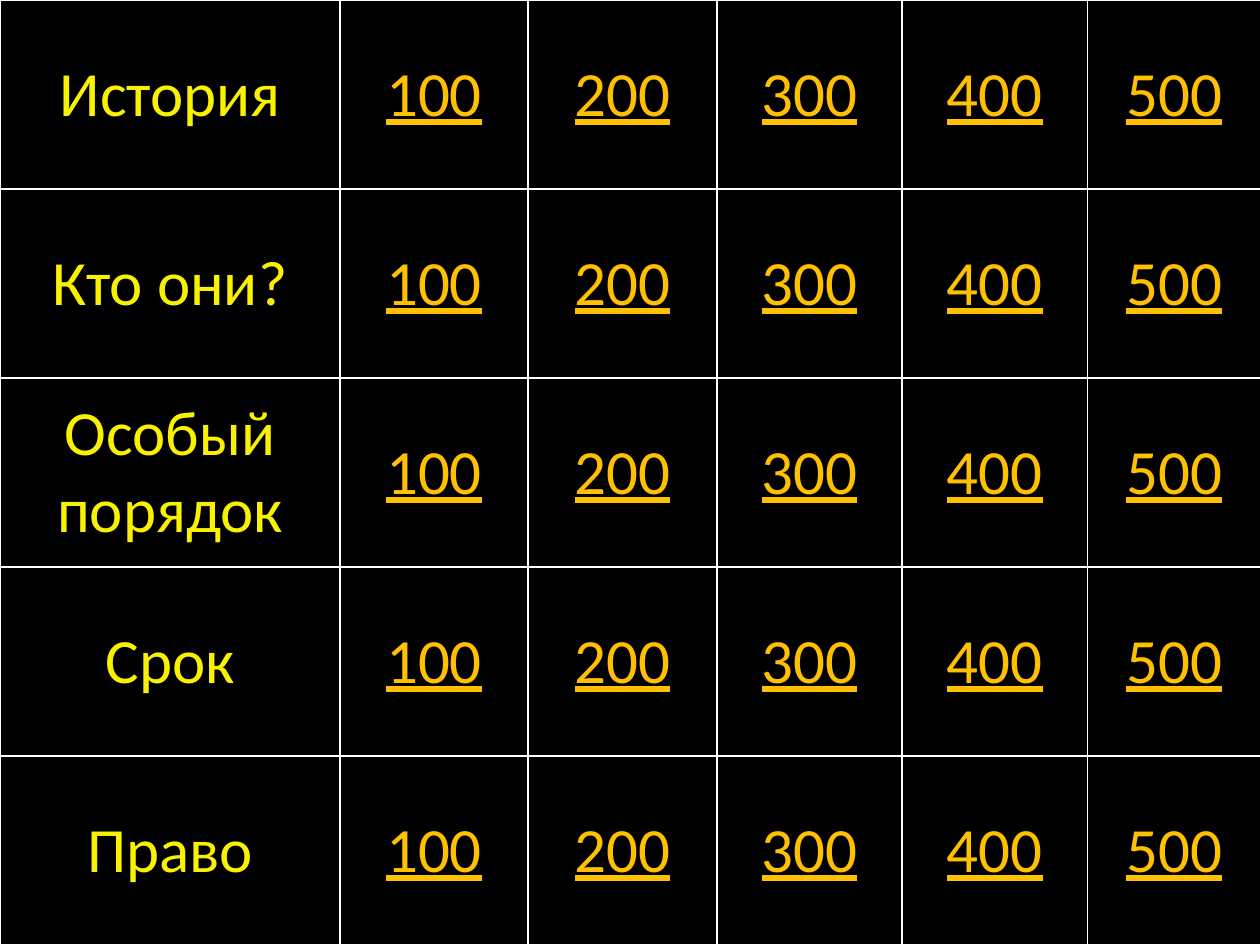
from lxml.etree import SubElement
from pptx import Presentation
from pptx.dml.color import RGBColor
from pptx.enum.text import MSO_ANCHOR, PP_ALIGN
from pptx.oxml.ns import qn
from pptx.util import Inches, Pt

COLORS = {"background": "000000", "grid": "FFFFFF", "topic": "F8F200", "points": "FFC000"}
TOPICS = ["История", "Кто они?", "Особый порядок", "Срок", "Право"]
POINTS = ["100", "200", "300", "400", "500"]
COLUMN_WIDTHS = [2.7, 1.49, 1.5, 1.47, 1.47, 1.38]
ROW_HEIGHT = 1.5


def add_borders(cell):
    properties = cell._tc.get_or_add_tcPr()
    for side in ("a:lnL", "a:lnR", "a:lnT", "a:lnB"):
        line = SubElement(properties, qn(side), w=str(Pt(1)))
        fill = SubElement(line, qn("a:solidFill"))
        SubElement(fill, qn("a:srgbClr"), val=COLORS["grid"])


prs = Presentation()
prs.slide_width = Inches(10)
prs.slide_height = Inches(7.5)
slide = prs.slides.add_slide(prs.slide_layouts[6])
slide.background.fill.solid()
slide.background.fill.fore_color.rgb = RGBColor.from_string(COLORS["background"])

board = slide.shapes.add_table(
    len(TOPICS), len(COLUMN_WIDTHS), 0, 0, Inches(10), Inches(7.5)
).table
board.first_row = False
board.horz_banding = False
for column, width in zip(board.columns, COLUMN_WIDTHS):
    column.width = Inches(width)

for row_index, topic in enumerate(TOPICS):
    board.rows[row_index].height = Inches(ROW_HEIGHT)
    for column_index, label in enumerate([topic] + POINTS):
        is_points = column_index > 0
        cell = board.cell(row_index, column_index)
        add_borders(cell)
        cell.fill.background()
        cell.vertical_anchor = MSO_ANCHOR.MIDDLE
        paragraph = cell.text_frame.paragraphs[0]
        paragraph.alignment = PP_ALIGN.CENTER
        run = paragraph.add_run()
        run.text = label
        run.font.name = "Calibri"
        run.font.size = Pt(36)
        run.font.underline = is_points
        run.font.color.rgb = RGBColor.from_string(COLORS["points" if is_points else "topic"])

prs.save("out.pptx")
